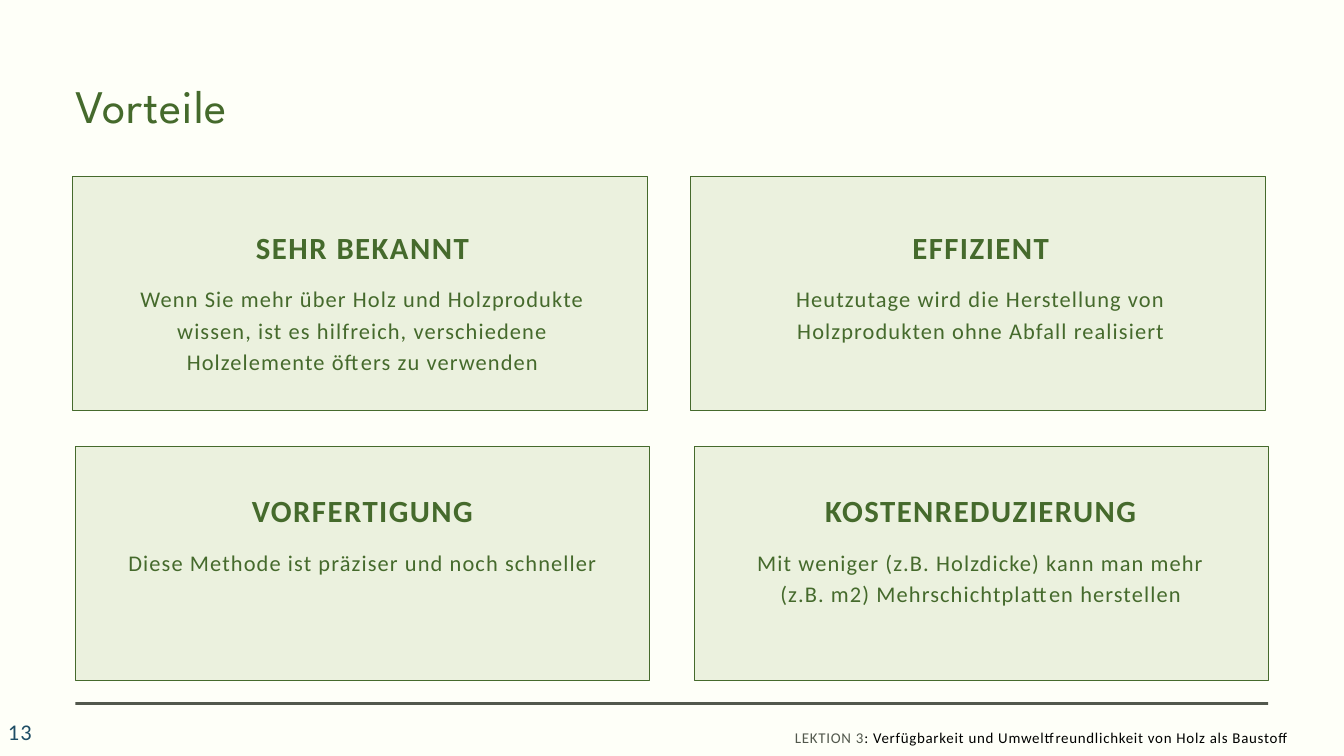
from pptx import Presentation
from pptx.dml.color import RGBColor
from pptx.enum.shapes import MSO_SHAPE
from pptx.enum.text import MSO_ANCHOR, PP_ALIGN
from pptx.util import Inches, Pt

CARD_WIDTH, CARD_HEIGHT = 8.55, 3.48
COPY_WIDTH = 7.39
COPY_LEFTS = (1.7, 10.9)

# (card left, card top, heading top, body height, column, heading, body)
ADVANTAGES = [
    (1.12, 6.64, 7.3, 0.44, 0, "VORFERTIGUNG",
     "Diese Methode ist präziser und noch schneller"),
    (1.08, 2.62, 3.38, 1.43, 0, "SEHR BEKANNT",
     "Wenn Sie mehr über Holz und Holzprodukte wissen, ist es hilfreich, "
     "verschiedene Holzelemente öfters zu verwenden"),
    (10.28, 2.62, 3.38, 0.95, 1, "EFFIZIENT",
     "Heutzutage wird die Herstellung von Holzprodukten ohne Abfall realisiert"),
    (10.33, 6.64, 7.3, 0.92, 1, "KOSTENREDUZIERUNG",
     "Mit weniger (z.B. Holzdicke) kann man mehr (z.B. m2) "
     "Mehrschichtplatten herstellen"),
]


def rgb(value):
    return RGBColor.from_string(value)


class AdvantageSlide:
    GREEN, PALE_GREEN, GREY = "456A2C", "EBF1DE", "52584D"
    BLUE, BLACK, CREAM = "1E4D65", "000000", "FEFFF8"
    BODY_FONT, TITLE_FONT = "Calibri", "League Spartan"

    def __init__(self, presentation):
        self.slide = presentation.slides.add_slide(presentation.slide_layouts[6])
        self.shapes = self.slide.shapes
        background = self.slide.background.fill
        background.solid()
        background.fore_color.rgb = rgb(self.CREAM)

    def rectangle(self, left, top, width, height, fill, outline=None):
        box = self.shapes.add_shape(MSO_SHAPE.RECTANGLE, Inches(left), Inches(top),
                                    Inches(width), Inches(height))
        box.shadow.inherit = False
        box.fill.solid()
        box.fill.fore_color.rgb = rgb(fill)
        if outline:
            box.line.color.rgb = rgb(outline)
            box.line.width = Pt(0.75)
        else:
            box.line.fill.background()

    def text(self, left, top, width, height, parts, size, spacing, leading=None,
             font=BODY_FONT, bold=False, align=PP_ALIGN.LEFT, inset=0,
             anchor=MSO_ANCHOR.TOP, parent=None):
        """Add a one-paragraph text box; parts is a list of (words, colour)."""
        box = (parent or self.shapes).add_textbox(
            Inches(left), Inches(top), Inches(width), Inches(height))
        frame = box.text_frame
        frame.word_wrap = True
        frame.vertical_anchor = anchor
        frame.margin_left = frame.margin_right = Inches(inset)
        frame.margin_top = frame.margin_bottom = Inches(inset / 2)
        paragraph = frame.paragraphs[0]
        paragraph.alignment = align
        if leading:
            paragraph.line_spacing = Pt(leading)
        for words, colour in parts:
            run = paragraph.add_run()
            run.text = words
            run.font.name = font
            run.font.size = Pt(size)
            run.font.bold = bold
            run.font.color.rgb = rgb(colour)
            run.font._element.set("spc", str(round(spacing * 100)))

    def card(self, left, top, heading_top, body_height, column, heading, body):
        self.rectangle(left, top, CARD_WIDTH, CARD_HEIGHT, self.PALE_GREEN, self.GREEN)
        group = self.shapes.add_group_shape().shapes
        copy_left = COPY_LEFTS[column]
        self.text(copy_left, heading_top, COPY_WIDTH, 0.55, [(heading, self.GREEN)],
                  33, 1.6, 41.2, bold=True, align=PP_ALIGN.CENTER, parent=group)
        self.text(copy_left, heading_top + 0.8, COPY_WIDTH, body_height,
                  [(body, self.GREEN)], 24, 1.2, 33.6,
                  align=PP_ALIGN.CENTER, parent=group)

    def title(self, words):
        self.text(1.12, 1.05, 7.75, 0.94, [(words, self.GREEN)], 50, 1, 66.8,
                  font=self.TITLE_FONT)

    def footer(self, number, lesson, topic):
        self.rectangle(1.12, 10.45, 17.75, 0.04, self.GREY)
        self.text(0.02, 10.69, 2.33, 0.4, [(number, self.BLUE)], 24, 1.2,
                  inset=0.1, anchor=MSO_ANCHOR.MIDDLE)
        self.text(11.83, 10.6, 8.17, 0.43,
                  [(lesson, self.GREY), (topic, self.BLACK)], 16, 0.8, 36.5)


def main():
    presentation = Presentation()
    presentation.slide_width = Inches(20)
    presentation.slide_height = Inches(11.25)
    page = AdvantageSlide(presentation)
    page.title("Vorteile")
    for advantage in ADVANTAGES:
        page.card(*advantage)
    page.footer("13", "LEKTION 3",
                ": Verfügbarkeit und Umweltfreundlichkeit von Holz als Baustoff")
    presentation.save("out.pptx")


if __name__ == "__main__":
    main()
